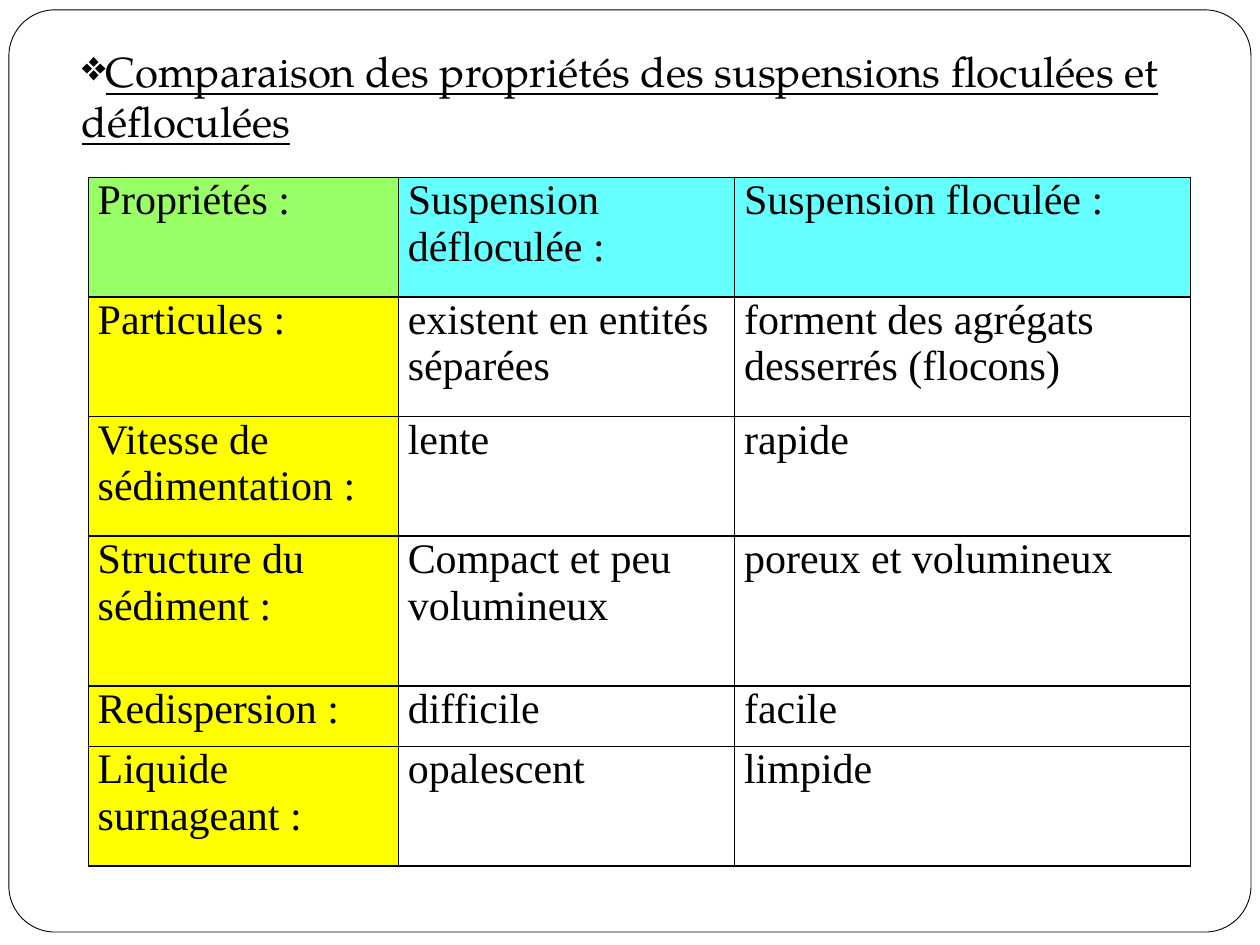
from lxml import etree
from pptx import Presentation
from pptx.dml.color import RGBColor
from pptx.enum.shapes import MSO_SHAPE
from pptx.enum.text import MSO_AUTO_SIZE, PP_ALIGN
from pptx.oxml.ns import qn
from pptx.util import Cm, Pt

ROUNDED = MSO_SHAPE.ROUNDED_RECTANGLE
GROW = MSO_AUTO_SIZE.SHAPE_TO_FIT_TEXT
LEFT, JUSTIFY = PP_ALIGN.LEFT, PP_ALIGN.JUSTIFY

COLORS = {
    "ink": "000000",
    "paper": "FFFFFF",
    "corner": "99FF66",
    "header": "66FFFF",
    "property": "FFFF00",
}
TITLE_FONT, TABLE_FONT = "TeX Gyre Pagella", "Times New Roman"

TITLE = "Comparaison des propriétés des suspensions floculées et défloculées"
COMPARISON = [
    ("Propriétés :", "Suspension défloculée :", "Suspension floculée :"),
    ("Particules :", "existent en entités séparées",
     "forment des agrégats desserrés (flocons)"),
    ("Vitesse de sédimentation :", "lente", "rapide"),
    ("Structure du sédiment :", "Compact et peu volumineux", "poreux et volumineux"),
    ("Redispersion :", "difficile", "facile"),
    ("Liquide surnageant :", "opalescent", "limpide"),
]
JUSTIFIED = {(0, 0), (0, 1), (0, 2), (2, 1)}
COLUMN_WIDTHS = [6.25, 6.78, 9.19]
ROW_HEIGHTS = [2.41, 2.41, 2.41, 3.02, 1.22, 2.41]


def color(name):
    return RGBColor.from_string(COLORS[name])


def add_text(paragraph, text, font, underline=None):
    run = paragraph.add_run()
    run.text = text
    run.font.name = font
    run.font.size = Pt(24)
    run.font.color.rgb = color("ink")
    run.font.underline = underline


def add_frame(slide, left, top, width, height):
    frame = slide.shapes.add_shape(ROUNDED, Cm(left), Cm(top), Cm(width), Cm(height))
    frame.adjustments[0] = 0.05
    frame.shadow.inherit = False
    frame.fill.solid()
    frame.fill.fore_color.rgb = color("paper")
    frame.line.color.rgb = color("ink")
    frame.line.width = Pt(0.5)


def add_title(slide, left, top, width, height):
    title = slide.shapes.add_textbox(Cm(left), Cm(top), Cm(width), Cm(height))
    title.text_frame.word_wrap = True
    title.text_frame.auto_size = GROW
    paragraph = title.text_frame.paragraphs[0]
    add_text(paragraph, TITLE, TITLE_FONT, underline=True)
    # The bullet sits directly against the first word
    properties = paragraph._p.get_or_add_pPr()
    properties.set("marL", "0")
    properties.set("indent", "0")
    etree.SubElement(properties, qn("a:buChar")).set("char", "❖")


def add_borders(cell):
    properties = cell._tc.get_or_add_tcPr()
    for side in ("a:lnL", "a:lnR", "a:lnT", "a:lnB"):
        border = etree.SubElement(properties, qn(side), w=str(Pt(1)))
        fill = etree.SubElement(border, qn("a:solidFill"))
        etree.SubElement(fill, qn("a:srgbClr"), val=COLORS["ink"])


def cell_color(row, column):
    if row == 0:
        return "header" if column else "corner"
    return None if column else "property"


def add_comparison(slide, left, top):
    table = slide.shapes.add_table(
        len(ROW_HEIGHTS), len(COLUMN_WIDTHS), Cm(left), Cm(top),
        Cm(sum(COLUMN_WIDTHS)), Cm(sum(ROW_HEIGHTS))).table
    table.first_row = table.horz_banding = False
    for column, width in zip(table.columns, COLUMN_WIDTHS):
        column.width = Cm(width)
    for row, height in zip(table.rows, ROW_HEIGHTS):
        row.height = Cm(height)

    for r, entries in enumerate(COMPARISON):
        for c, entry in enumerate(entries):
            cell = table.cell(r, c)
            cell.margin_left = cell.margin_right = Cm(0.19)
            cell.margin_top = cell.margin_bottom = 0
            add_borders(cell)
            background = cell_color(r, c)
            if background:
                cell.fill.solid()
                cell.fill.fore_color.rgb = color(background)
            else:
                cell.fill.background()
            paragraph = cell.text_frame.paragraphs[0]
            paragraph.alignment = JUSTIFY if (r, c) in JUSTIFIED else LEFT
            add_text(paragraph, entry, TABLE_FONT)


def main():
    presentation = Presentation()
    presentation.slide_width, presentation.slide_height = Cm(25.4), Cm(19.05)
    slide = presentation.slides.add_slide(presentation.slide_layouts[6])
    add_frame(slide, 0.18, 0.2, 25.04, 18.59)
    add_comparison(slide, 1.78, 3.58)
    add_title(slide, 1.4, 0.79, 23.01, 2.31)
    presentation.save("out.pptx")


if __name__ == "__main__":
    main()
